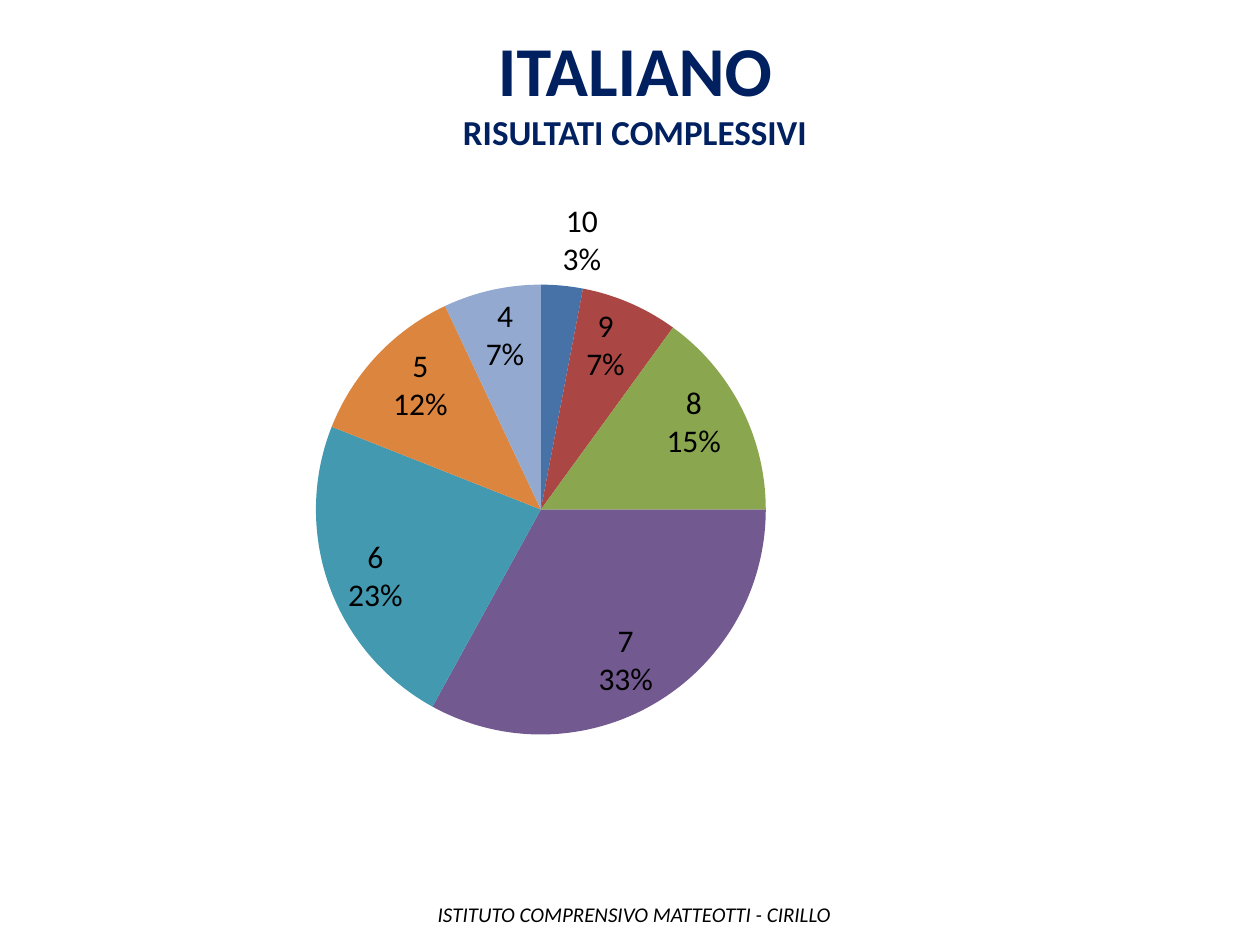
from lxml import etree
from pptx import Presentation
from pptx.chart.data import CategoryChartData
from pptx.dml.color import RGBColor
from pptx.enum.chart import XL_CHART_TYPE, XL_LABEL_POSITION
from pptx.enum.text import PP_ALIGN
from pptx.oxml import parse_xml
from pptx.oxml.ns import nsdecls, qn
from pptx.util import Inches, Pt

FONT = "Calibri"
NAVY = "002060"
BLACK = "000000"
GRADES = [
    ("10", 3, "4672A8"),
    ("9", 7, "AA4744"),
    ("8", 15, "8AA64F"),
    ("7", 33, "725990"),
    ("6", 23, "4299B0"),
    ("5", 12, "DC853E"),
    ("4", 7, "93A9CF"),
]


def color(value):
    return RGBColor.from_string(value)


def style_font(font, size, shade, bold=False, italic=False):
    font.name = FONT
    font.size = Pt(size)
    font.color.rgb = color(shade)
    font.bold = bold
    font.italic = italic


def add_text(page, left, top, width, height, lines, shade, bold=False, italic=False):
    box = page.shapes.add_textbox(Inches(left), Inches(top), Inches(width), Inches(height))
    frame = box.text_frame
    frame.word_wrap = True
    for index, (text, size) in enumerate(lines):
        para = frame.add_paragraph() if index else frame.paragraphs[0]
        para.text = text
        para.alignment = PP_ALIGN.CENTER
        style_font(para.font, size, shade, bold, italic)


def place_pie(chart, width, height, left, top, diameter):
    fractions = {"x": left / width, "y": top / height,
                 "w": diameter / width, "h": diameter / height}
    values = "".join(f'<c:{key} val="{value:.3f}"/>' for key, value in fractions.items())
    layout = parse_xml(
        f'<c:layout {nsdecls("c")}><c:manualLayout><c:layoutTarget val="inner"/>'
        f'<c:xMode val="edge"/><c:yMode val="edge"/>{values}</c:manualLayout></c:layout>'
    )
    plot_area = chart._chartSpace.chart.plotArea
    for previous in plot_area.findall(qn("c:layout")):
        plot_area.remove(previous)
    plot_area.insert(0, layout)


def add_grade_pie(page, left, top, width, height):
    data = CategoryChartData()
    data.categories = [grade for grade, _, _ in GRADES]
    data.add_series("Series 1", [share for _, share, _ in GRADES])
    chart = page.shapes.add_chart(
        XL_CHART_TYPE.PIE, Inches(left), Inches(top), Inches(width), Inches(height), data
    ).chart
    chart.has_legend = False
    chart.has_title = False
    style_font(chart.font, 18, BLACK)
    place_pie(chart, width, height, left=2.08, top=0.79, diameter=3.57)

    plot = chart.plots[0]
    plot.vary_by_categories = True
    series = plot.series[0]
    for index, (_, _, shade) in enumerate(GRADES):
        fill = series.points[index].format.fill
        fill.solid()
        fill.fore_color.rgb = color(shade)

    labels = series.data_labels
    labels.show_value = False
    labels.show_category_name = True
    labels.show_percentage = True
    labels.position = XL_LABEL_POSITION.BEST_FIT
    style_font(labels.font, 18, BLACK)
    separator = etree.Element(qn("c:separator"))
    separator.text = "\n"
    labels._element.find(qn("c:showPercent")).addnext(separator)
    bubble = labels._element.find(qn("c:showBubbleSize"))
    if bubble is not None:
        bubble.addnext(separator)


def main():
    deck = Presentation()
    deck.slide_width = Inches(10)
    deck.slide_height = Inches(7.5)
    page = deck.slides.add_slide(deck.slide_layouts[6])
    add_text(page, 1.38, 0.16, 7.32, 1.11,
             [("ITALIANO", 40), ("RISULTATI COMPLESSIVI", 20)], NAVY, bold=True)
    add_text(page, 3.31, 7.11, 3.45, 0.3,
             [("ISTITUTO COMPRENSIVO MATTEOTTI - CIRILLO", 12)], BLACK, italic=True)
    add_grade_pie(page, 0.43, 1.47, 7.9, 4.51)
    deck.save("out.pptx")


if __name__ == "__main__":
    main()
